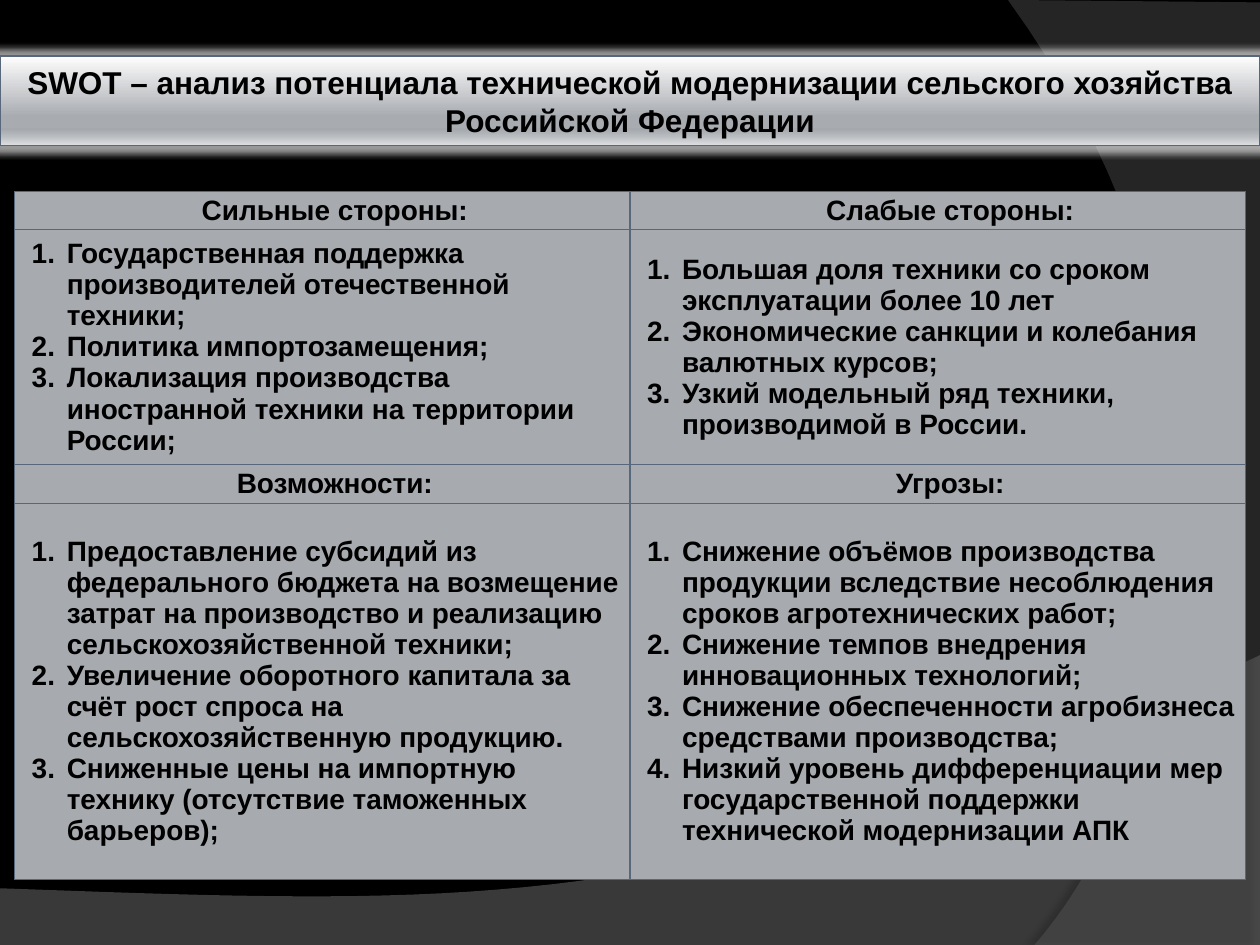
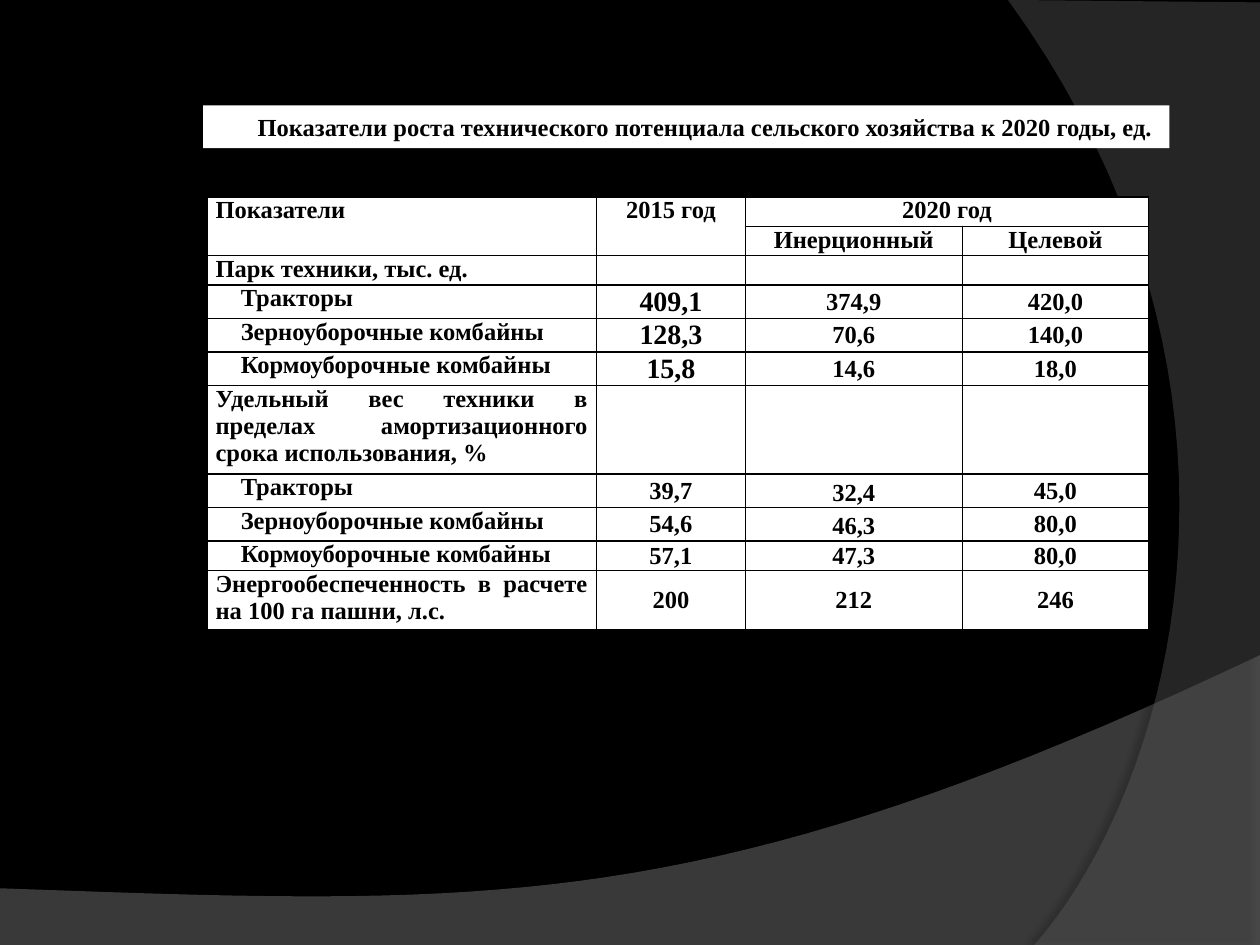
from lxml import etree
from pptx import Presentation
from pptx import util as u
from pptx.dml.color import RGBColor
from pptx.enum import text
from pptx.oxml import parse_xml
from pptx.oxml.ns import nsdecls, qn

BLACK = RGBColor(0x00, 0x00, 0x00)
WHITE = RGBColor(0xFF, 0xFF, 0xFF)
SLATE = RGBColor(0x59, 0x67, 0x7D)
SILVER = RGBColor(0xA7, 0xAA, 0xAF)
LOW_WAVE = RGBColor(0x7F, 0x7F, 0x7F)
SIDE_WAVE = RGBColor(0x5E, 0x5E, 0x5E)
CENTER, LEFT, JUSTIFY = text.PP_ALIGN.CENTER, text.PP_ALIGN.LEFT, text.PP_ALIGN.JUSTIFY
TOP, MIDDLE = text.MSO_ANCHOR.TOP, text.MSO_ANCHOR.MIDDLE


def add_xml(parent, xml):
    """Append one DrawingML element, written with the a: prefix."""
    parent.append(parse_xml(f'<a:root {nsdecls("a")}>{xml}</a:root>')[0])


def style_para(para, font, size, alignment, margin=0, indent=0):
    settings = para._p.get_or_add_pPr()
    settings.set("marL", str(u.Pt(margin)))
    settings.set("indent", str(u.Pt(indent)))
    para.alignment = alignment
    para.font.name, para.font.size, para.font.bold = font, u.Pt(size), True
    para.font.color.rgb = BLACK


deck = Presentation()
deck.slide_width, deck.slide_height = u.Pt(720), u.Pt(540)
layout = deck.slide_layouts[5]
layout.background.fill.solid()
layout.background.fill.fore_color.rgb = BLACK
pages = [deck.slides.add_slide(layout) for _ in range(2)]
swot_page, growth_page = pages

# Background waves: straight corners, then a Bezier curve from the last corner;
# colour, opacity, then shadow opacity, distance and direction
waves = [
    ([(0, 507.6), (0, 540), (720, 540), (720, 374.4)],
     [(402.5, 524.9), (281.5, 517.7), (0, 507.6)], LOW_WAVE, 45, 35, 3.5, 270),
    ([(720, 1.4), (720, 540), (591.1, 540)],
     [(673.2, 445.7), (733, 216), (576, 0)], SIDE_WAVE, 40, 45, 4, 180),
]
STEPS = 40
for corners, (c1, c2, end), color, opacity, dark, distance, direction in waves:
    points = list(corners)
    for step in range(1, STEPS + 1):
        t = step / STEPS
        weights = ((1 - t) ** 3, 3 * t * (1 - t) ** 2, 3 * t ** 2 * (1 - t), t ** 3)
        points.append([sum(w * p[axis] for w, p in zip(weights, (corners[-1], c1, c2, end)))
                       for axis in (0, 1)])
    points = [(u.Pt(x), u.Pt(y)) for x, y in points]
    builder = swot_page.shapes.build_freeform(*points[0])
    builder.add_line_segments(points[1:], close=True)
    wave = builder.convert_to_shape()
    wave.fill.solid()
    wave.fill.fore_color.rgb = color
    wave.line.fill.background()
    wave.shadow.inherit = False
    properties = wave.element.spPr
    add_xml(properties.find(".//" + qn("a:srgbClr")), f'<a:alpha val="{opacity * 1000}"/>')
    add_xml(properties.find(qn("a:effectLst")),
            f'<a:outerShdw blurRad="{u.Pt(4)}" dist="{u.Pt(distance)}" dir="{direction * 60000}">'
            f'<a:srgbClr val="{BLACK}"><a:alpha val="{dark * 1000}"/></a:srgbClr></a:outerShdw>')
    layout.shapes.element.append(wave.element)

titles = [
    ("SWOT – анализ потенциала технической модернизации сельского хозяйства "
     "Российской Федерации", (0, 32, 720, 51.1), "Arial", 18, 0, True),
    ("Показатели роста технического потенциала сельского хозяйства к 2020 годы, ед.",
     (116.1, 60.2, 552.2, 24.5), "Times New Roman", 14, 21.6, False),
]
for page, (wording, place, font, size, indent, wrap) in zip(pages, titles):
    title = page.shapes.title
    title.left, title.top, title.width, title.height = map(u.Pt, place)
    title.text = wording
    title.text_frame.word_wrap = wrap
    title.text_frame.auto_size = text.MSO_AUTO_SIZE.NONE
    title.text_frame.vertical_anchor = MIDDLE
    style_para(title.text_frame.paragraphs[0], font, size, CENTER, indent=indent)

# SWOT page: metallic title band with a soft glow
band = swot_page.shapes.title
band.fill.gradient()
band.fill.gradient_angle = 270
band.line.color.rgb = SLATE
band.line.width = u.Pt(0.75)
band.shadow.inherit = False
stops = band.element.spPr.find(".//" + qn("a:gsLst"))
for stop in list(stops):
    stops.remove(stop)
for place, color in [(0, "FEFEFE"), (68, "A8ABB0"), (81, "A5A8AD"), (86, "AEB1B5"), (100, "DDDEE0")]:
    add_xml(stops, f'<a:gs pos="{place * 1000}"><a:srgbClr val="{color}"/></a:gs>')
add_xml(band.element.spPr.find(qn("a:effectLst")),
        f'<a:glow rad="{u.Pt(8)}"><a:srgbClr val="{WHITE}"><a:alpha val="60000"/></a:srgbClr></a:glow>')

swot = [
    [("Сильные стороны:", [
        "Государственная поддержка производителей отечественной техники;",
        "Политика импортозамещения;",
        "Локализация производства иностранной техники на территории России;"]),
     ("Слабые стороны:", [
         "Большая доля техники со сроком эксплуатации более 10 лет",
         "Экономические санкции и колебания валютных курсов;",
         "Узкий модельный ряд техники, производимой в России."])],
    [("Возможности:", [
        "Предоставление субсидий из федерального бюджета на возмещение затрат на производство "
        "и реализацию сельскохозяйственной техники;",
        "Увеличение оборотного капитала за счёт рост спроса на сельскохозяйственную продукцию.",
        "Сниженные цены на импортную технику (отсутствие таможенных барьеров);"]),
     ("Угрозы:", [
         "Снижение объёмов производства продукции вследствие несоблюдения сроков "
         "агротехнических работ;",
         "Снижение темпов внедрения инновационных технологий;",
         "Снижение обеспеченности агробизнеса средствами производства;",
         "Низкий уровень дифференциации мер государственной поддержки технической "
         "модернизации АПК"])],
]
swot_heights = [21.6, 134.4, 22.2, 214.6]
swot_widths = [351.6, 351.6]
swot_table = swot_page.shapes.add_table(
    4, 2, u.Pt(8.4), u.Pt(109.6), u.Pt(sum(swot_widths)), u.Pt(sum(swot_heights))).table
for half, quadrants in enumerate(swot):
    for col, (heading, items) in enumerate(quadrants):
        header, body = swot_table.cell(2 * half, col), swot_table.cell(2 * half + 1, col)
        header.vertical_anchor = body.vertical_anchor = MIDDLE
        header.text = heading
        style_para(header.text_frame.paragraphs[0], "Arial", 16, CENTER, indent=14.4)
        body.text = "\n".join(items)
        for para in body.text_frame.paragraphs:
            add_xml(para._p.get_or_add_pPr(), '<a:buAutoNum type="arabicPeriod"/>')
            style_para(para, "Arial", 16, LEFT, margin=26.8, indent=-20)

# Growth indicators page
growth_page.shapes.title.fill.solid()
growth_page.shapes.title.fill.fore_color.rgb = WHITE

machines = ["Тракторы", "Зерноуборочные комбайны", "Кормоуборочные комбайны"]
indicators = [
    ["Показатели", "2015 год", "2020 год", ""],
    ["", "", "Инерционный", "Целевой"],
    ["Парк техники, тыс. ед.", "", "", ""],
    [machines[0], "409,1", "374,9", "420,0"],
    [machines[1], "128,3", "70,6", "140,0"],
    [machines[2], "15,8", "14,6", "18,0"],
    ["Удельный вес техники в пределах амортизационного срока использования, %", "", "", ""],
    [machines[0], "39,7", "32,4", "45,0"],
    [machines[1], "54,6", "46,3", "80,0"],
    [machines[2], "57,1", "47,3", "80,0"],
    ["Энергообеспеченность в расчете на 100 га пашни, л.с.", "200", "212", "246"],
]
growth_heights = [16.8] * 3 + [19.2] * 3 + [50.4, 19.2, 19.2, 16.8, 33.6]
growth_widths = [222.7, 85, 124, 106.5]
growth_table = growth_page.shapes.add_table(
    len(growth_heights), len(growth_widths), u.Pt(118.2), u.Pt(112.5),
    u.Pt(sum(growth_widths)), u.Pt(sum(growth_heights))).table
for r, values in enumerate(indicators):
    for c, value in enumerate(values):
        cell = growth_table.cell(r, c)
        cell.vertical_anchor = MIDDLE if c and r > 1 else TOP
        cell.text = value
        para = cell.text_frame.paragraphs[0]
        if not value:
            etree.SubElement(para._p, qn("a:endParaRPr"), sz="1400")
        if c == 2 and r in (7, 8):
            para.line_spacing = 1.15
        style_para(para, "Times New Roman", 16 if c == 1 and 3 <= r <= 5 else 14,
                   CENTER if c else JUSTIFY, margin=14.4 if value in machines else 0)
for first, last in [((0, 0), (1, 0)), ((0, 1), (1, 1)), ((0, 2), (0, 3))]:
    growth_table.cell(*first).merge(growth_table.cell(*last))

# Grid, fill and margins of both tables
for table, heights, widths, border, weight, fill, side in [
        (swot_table, swot_heights, swot_widths, SLATE, 0.75, SILVER, 3),
        (growth_table, growth_heights, growth_widths, BLACK, 1, WHITE, 5)]:
    table.first_row = table.horz_banding = False
    for row, height in zip(table.rows, heights):
        row.height = u.Pt(height)
    for column, width in zip(table.columns, widths):
        column.width = u.Pt(width)
    for cell in table.iter_cells():
        for edge in ("lnL", "lnR", "lnT", "lnB"):
            add_xml(cell._tc.get_or_add_tcPr(),
                    f'<a:{edge} w="{u.Pt(weight)}"><a:solidFill><a:srgbClr val="{border}"/>'
                    f'</a:solidFill></a:{edge}>')
        cell.fill.solid()
        cell.fill.fore_color.rgb = fill
        cell.margin_left = cell.margin_right = u.Pt(side)
        cell.margin_top = cell.margin_bottom = 0

deck.save("out.pptx")
